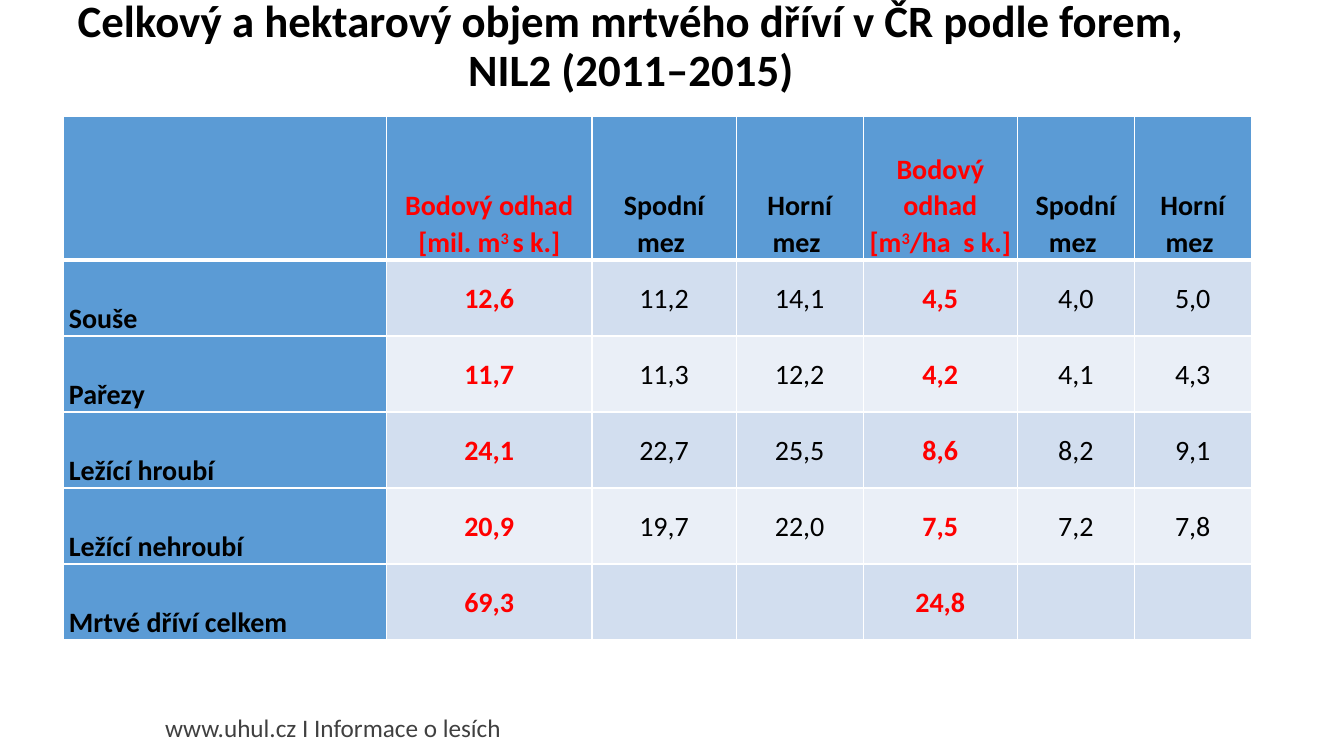
"""Build the slide on dead wood volume in the Czech Republic by form."""
from dataclasses import dataclass

from lxml import etree
from pptx import Presentation
from pptx import util as u
from pptx.dml.color import RGBColor
from pptx.enum import text
from pptx.oxml import ns

FONT = "Calibri"
BLACK = RGBColor(0x00, 0x00, 0x00)
RED = RGBColor(0xFF, 0x00, 0x00)
GREY = RGBColor(0x40, 0x40, 0x40)
WHITE = RGBColor(0xFF, 0xFF, 0xFF)
BLUE = RGBColor(0x5B, 0x9B, 0xD5)
DARK_BAND = RGBColor(0xD2, 0xDE, 0xEF)
LIGHT_BAND = RGBColor(0xEA, 0xEF, 0xF7)

HEADER_HEIGHT = 103
FORM_HEIGHT = 54.3
HEADER_RULE = 3
GRID_RULE = 1


@dataclass(frozen=True)
class Column:
    """A table column: its width, heading runs and emphasis."""
    width: float
    heading: tuple[str, ...] = ()
    estimate: bool = False


@dataclass(frozen=True)
class WoodForm:
    """A form of dead wood with its volumes."""
    name: str
    volumes: tuple[str, ...]


COLUMNS = (
    Column(230.4),
    Column(146.9, ("Bodový odhad [mil. m", "3 ", "s k.]"), True),
    Column(103, ("Spodní mez ",)),
    Column(90.7, ("Horní mez ",)),
    Column(110.2, ("Bodový odhad [m", "3", "/ha  s k.]"), True),
    Column(83.5, ("Spodní mez ",)),
    Column(83.5, ("Horní mez ",)),
)
WOOD_FORMS = (
    WoodForm("Souše", ("12,6", "11,2", "14,1", "4,5", "4,0", "5,0")),
    WoodForm("Pařezy", ("11,7", "11,3", "12,2", "4,2", "4,1", "4,3")),
    WoodForm("Ležící hroubí", ("24,1", "22,7", "25,5", "8,6", "8,2", "9,1")),
    WoodForm("Ležící nehroubí", ("20,9", "19,7", "22,0", "7,5", "7,2", "7,8")),
    WoodForm("Mrtvé dříví celkem", ("69,3", "", "", "24,8", "", "")),
)


def add_run(paragraph, wording: str, size: float, color: RGBColor,
            bold: bool = False, raised: bool = False) -> None:
    """Append one formatted run."""
    run = paragraph.add_run()
    run.text = wording
    run.font.name = FONT
    run.font.size = u.Pt(size)
    run.font.bold = bold
    run.font.color.rgb = color
    if raised:
        run.font._element.set("baseline", "30000")


def add_borders(cell, top: float, bottom: float) -> None:
    """Draw white borders round a cell."""
    properties = cell._tc.get_or_add_tcPr()
    widths = {"lnL": GRID_RULE, "lnR": GRID_RULE, "lnT": top, "lnB": bottom}
    for side, width in widths.items():
        line = etree.SubElement(properties, ns.qn(f"a:{side}"), w=str(u.Pt(width)))
        fill = etree.SubElement(line, ns.qn("a:solidFill"))
        etree.SubElement(fill, ns.qn("a:srgbClr"), val=str(WHITE))


def fill_cell(cell, runs: tuple[str, ...], fill: RGBColor, color: RGBColor, bold: bool,
              align: text.PP_ALIGN, anchor: text.MSO_ANCHOR) -> None:
    """Colour a cell and write its runs, the second one raised."""
    cell.fill.solid()
    cell.fill.fore_color.rgb = fill
    cell.margin_left = cell.margin_right = u.Pt(3.6)
    cell.margin_top = cell.margin_bottom = u.Pt(0)
    cell.vertical_anchor = anchor
    paragraph = cell.text_frame.paragraphs[0]
    paragraph.alignment = align
    paragraph.line_spacing = 1.07
    for index, wording in enumerate(runs):
        add_run(paragraph, wording, 20, color, bold, raised=index == 1)


def add_title(slide) -> None:
    """Place and write the title."""
    title = slide.shapes.title
    title.left, title.top = u.Pt(36.7), u.Pt(0)
    title.width, title.height = u.Pt(828), u.Pt(67.7)
    frame = title.text_frame
    frame.word_wrap = True
    frame.auto_size = text.MSO_AUTO_SIZE.NONE
    frame.vertical_anchor = text.MSO_ANCHOR.MIDDLE
    heading = frame.paragraphs[0]
    heading.alignment = text.PP_ALIGN.CENTER
    heading.line_spacing = 0.9
    add_run(heading, "Celkový a hektarový objem mrtvého dříví v ČR podle forem, "
                     "NIL2 (2011–2015)", 32, BLACK, bold=True)


def add_volumes(slide) -> None:
    """Add the table of volumes with their bounds."""
    width = sum(column.width for column in COLUMNS)
    height = HEADER_HEIGHT + FORM_HEIGHT * len(WOOD_FORMS)
    volumes = slide.shapes.add_table(
        len(WOOD_FORMS) + 1, len(COLUMNS),
        u.Pt(45.6), u.Pt(82.8), u.Pt(width), u.Pt(height)).table
    volumes.horz_banding = False
    for index, row in enumerate(volumes.rows):
        row.height = u.Pt(FORM_HEIGHT if index else HEADER_HEIGHT)
        for cell in row.cells:
            add_borders(cell, HEADER_RULE if index == 1 else GRID_RULE,
                        GRID_RULE if index else HEADER_RULE)

    center, bottom = text.PP_ALIGN.CENTER, text.MSO_ANCHOR.BOTTOM
    for col, column in enumerate(COLUMNS):
        volumes.columns[col].width = u.Pt(column.width)
        color = RED if column.estimate else BLACK
        fill_cell(volumes.cell(0, col), column.heading, BLUE, color, True, center, bottom)
        for row, form in enumerate(WOOD_FORMS, start=1):
            cell = volumes.cell(row, col)
            if col == 0:
                fill_cell(cell, (form.name,), BLUE, BLACK, True, text.PP_ALIGN.LEFT, bottom)
                continue
            volume = form.volumes[col - 1]
            fill_cell(cell, (volume,) if volume else (),
                      DARK_BAND if row % 2 else LIGHT_BAND, color, column.estimate,
                      center, text.MSO_ANCHOR.MIDDLE)


def add_footer(slide) -> None:
    """Add the publisher line at the bottom."""
    footer = slide.shapes.add_textbox(u.Pt(110.9), u.Pt(507.6), u.Pt(448.6), u.Pt(28.8))
    footer.text_frame.word_wrap = True
    publisher = footer.text_frame.paragraphs[0]
    publisher.line_spacing = 0.9
    add_run(publisher, "www.uhul.cz I Informace o lesích", 18, GREY)


def main() -> None:
    """Build and save the presentation."""
    deck = Presentation()
    deck.slide_width, deck.slide_height = u.Pt(960), u.Pt(540)
    slide = deck.slides.add_slide(deck.slide_layouts.get_by_name("Title Only"))
    add_footer(slide)
    add_title(slide)
    add_volumes(slide)
    deck.save("out.pptx")


if __name__ == "__main__":
    main()
